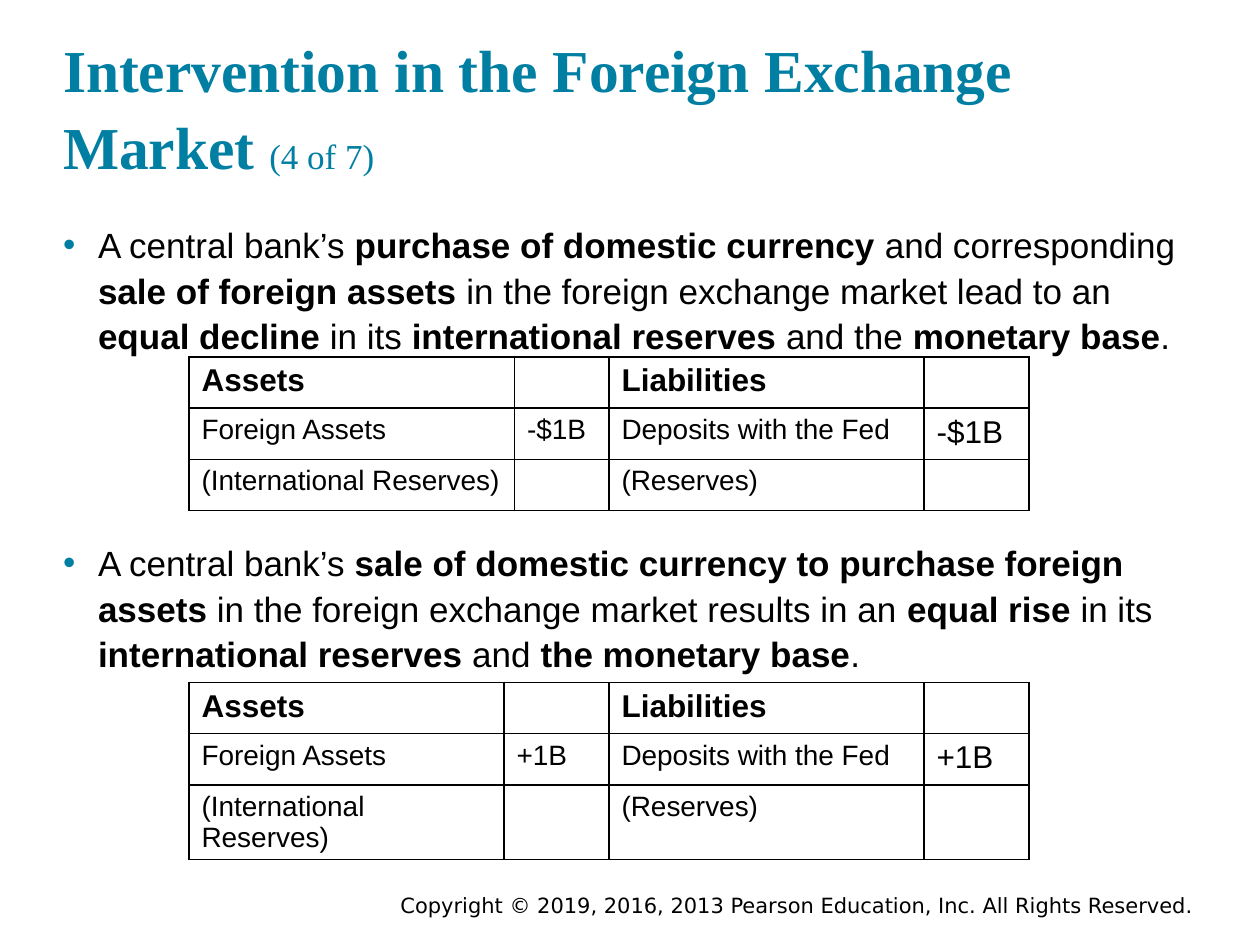
from lxml import etree
from pptx import Presentation
from pptx.dml.color import RGBColor
from pptx.enum.text import MSO_ANCHOR, MSO_AUTO_SIZE, PP_ALIGN
from pptx.oxml import parse_xml
from pptx.oxml.ns import nsdecls, qn
from pptx.util import Pt

LEFT, CENTER = PP_ALIGN.LEFT, PP_ALIGN.CENTER
TOP, BOTTOM = MSO_ANCHOR.TOP, MSO_ANCHOR.BOTTOM
NO_AUTOFIT = MSO_AUTO_SIZE.NONE

TEAL = RGBColor(0x00, 0x7F, 0xA3)
BLACK = RGBColor(0x00, 0x00, 0x00)

TITLE_FONT = {"name": "Times New Roman", "size": Pt(34), "bold": True}
COUNT_FONT = {**TITLE_FONT, "size": Pt(20), "bold": False}
BODY_FONT = {"name": "Arial", "size": Pt(20)}
HEADER_FONT = {"name": "Arial", "size": Pt(18), "bold": True}
CELL_FONT = {"name": "Arial", "size": Pt(16), "bold": False}
LARGE_CELL_FONT = {**CELL_FONT, "size": Pt(18)}
COPYRIGHT_FONT = {"name": "DejaVu Sans", "size": Pt(12)}

LINE_SPACING = 1.08
INDENT = Pt(20)
ROW_HEIGHT = 29.25
TABLE_GAP = 104

BULLETS = [
    "A central bank’s **purchase of domestic currency **and corresponding"
    "** sale of foreign assets **in the foreign exchange market lead to an "
    "**equal decline **in its **international reserves **and the **monetary base**.",
    "A central bank’s **sale of domestic currency to purchase foreign assets** in the "
    "foreign exchange market results in an **equal rise** in its "
    "**international reserves** and **the monetary base**.",
]


def apply(target, values):
    for name, value in values.items():
        setattr(target, name, value)


def place(shape, box):
    apply(shape, dict(zip(("left", "top", "width", "height"), map(Pt, box))))


def add_run(paragraph, text, font, color):
    run = paragraph.add_run()
    run.text = text
    apply(run.font, font)
    run.font.color.rgb = color


def prepare_frame(placeholder, box, anchor):
    place(placeholder, box)
    frame = placeholder.text_frame
    apply(frame, {"margin_left": 0, "margin_top": 0, "margin_right": 0,
                  "margin_bottom": 0, "word_wrap": True,
                  "auto_size": NO_AUTOFIT, "vertical_anchor": anchor})
    return frame


def fill_title(placeholder, box):
    paragraph = prepare_frame(placeholder, box, BOTTOM).paragraphs[0]
    apply(paragraph, {"alignment": LEFT, "line_spacing": LINE_SPACING})
    add_run(paragraph, "Intervention in the Foreign Exchange Market ", TITLE_FONT, TEAL)
    add_run(paragraph, "(4 of 7)", COUNT_FONT, TEAL)


def add_bullet(paragraph):
    properties = paragraph._p.get_or_add_pPr()
    properties.set("marL", str(INDENT))
    properties.set("indent", str(-INDENT))
    color = etree.SubElement(properties, qn("a:buClr"))
    etree.SubElement(color, qn("a:srgbClr"), val=str(TEAL))
    etree.SubElement(properties, qn("a:buFont"), typeface="Arial")
    etree.SubElement(properties, qn("a:buChar"), char="•")


def fill_body(placeholder, box):
    """Write the bullets, leaving room for a table between them; ** toggles bold."""
    frame = prepare_frame(placeholder, box, TOP)
    for index, bullet in enumerate(BULLETS):
        paragraph = frame.add_paragraph() if index else frame.paragraphs[0]
        add_bullet(paragraph)
        apply(paragraph, {"alignment": LEFT, "line_spacing": LINE_SPACING,
                          "space_before": Pt(TABLE_GAP * index)})
        for part, text in enumerate(bullet.split("**")):
            add_run(paragraph, text, {**BODY_FONT, "bold": part % 2 == 1}, BLACK)


def style_cell(cell):
    properties = cell._tc.get_or_add_tcPr()
    for side in "LRTB":
        properties.append(parse_xml(
            f'<a:ln{side} {nsdecls("a")} w="{Pt(1)}"><a:solidFill>'
            f'<a:srgbClr val="{BLACK}"/></a:solidFill></a:ln{side}>'))
    cell.fill.background()


def add_balance_sheet(slide, box, column_widths, change):
    """Add a T-account showing one change on both sides."""
    rows = [
        ["Assets", "", "Liabilities", ""],
        ["Foreign Assets", change, "Deposits with the Fed", change],
        ["(International Reserves)", "", "(Reserves)", ""],
    ]
    table = slide.shapes.add_table(len(rows), len(column_widths), *map(Pt, box)).table
    apply(table, {"first_row": False, "horz_banding": False})
    for column, width in zip(table.columns, column_widths):
        column.width = Pt(width)
    for r, texts in enumerate(rows):
        table.rows[r].height = Pt(ROW_HEIGHT)
        for c, text in enumerate(texts):
            cell = table.cell(r, c)
            style_cell(cell)
            if text:
                body_font = LARGE_CELL_FONT if c == 3 else CELL_FONT
                font = body_font if r else HEADER_FONT
                add_run(cell.text_frame.paragraphs[0], text, font, BLACK)


def add_copyright(slide, box):
    frame = slide.shapes.add_textbox(*map(Pt, box)).text_frame
    frame.word_wrap = True
    paragraph = frame.paragraphs[0]
    paragraph.alignment = CENTER
    add_run(paragraph,
            "Copyright © 2019, 2016, 2013 Pearson Education, Inc. All Rights Reserved.",
            COPYRIGHT_FONT, BLACK)


def main():
    presentation = Presentation()
    apply(presentation, {"slide_width": Pt(720), "slide_height": Pt(540)})
    slide = presentation.slides.add_slide(presentation.slide_layouts[1])
    fill_title(slide.shapes.title, (36, 17.3, 648, 86.4))
    fill_body(slide.placeholders[1], (36, 126, 648, 356.4))
    table_height = 3 * ROW_HEIGHT
    add_balance_sheet(slide, (108, 204, 480, table_height), (186, 54, 180, 60), "-$1B")
    add_balance_sheet(slide, (108, 390, 480, table_height), (180, 60, 180, 60), "+1B")
    add_copyright(slide, (212.4, 506.2, 486, 21.6))
    presentation.save("out.pptx")


if __name__ == "__main__":
    main()
